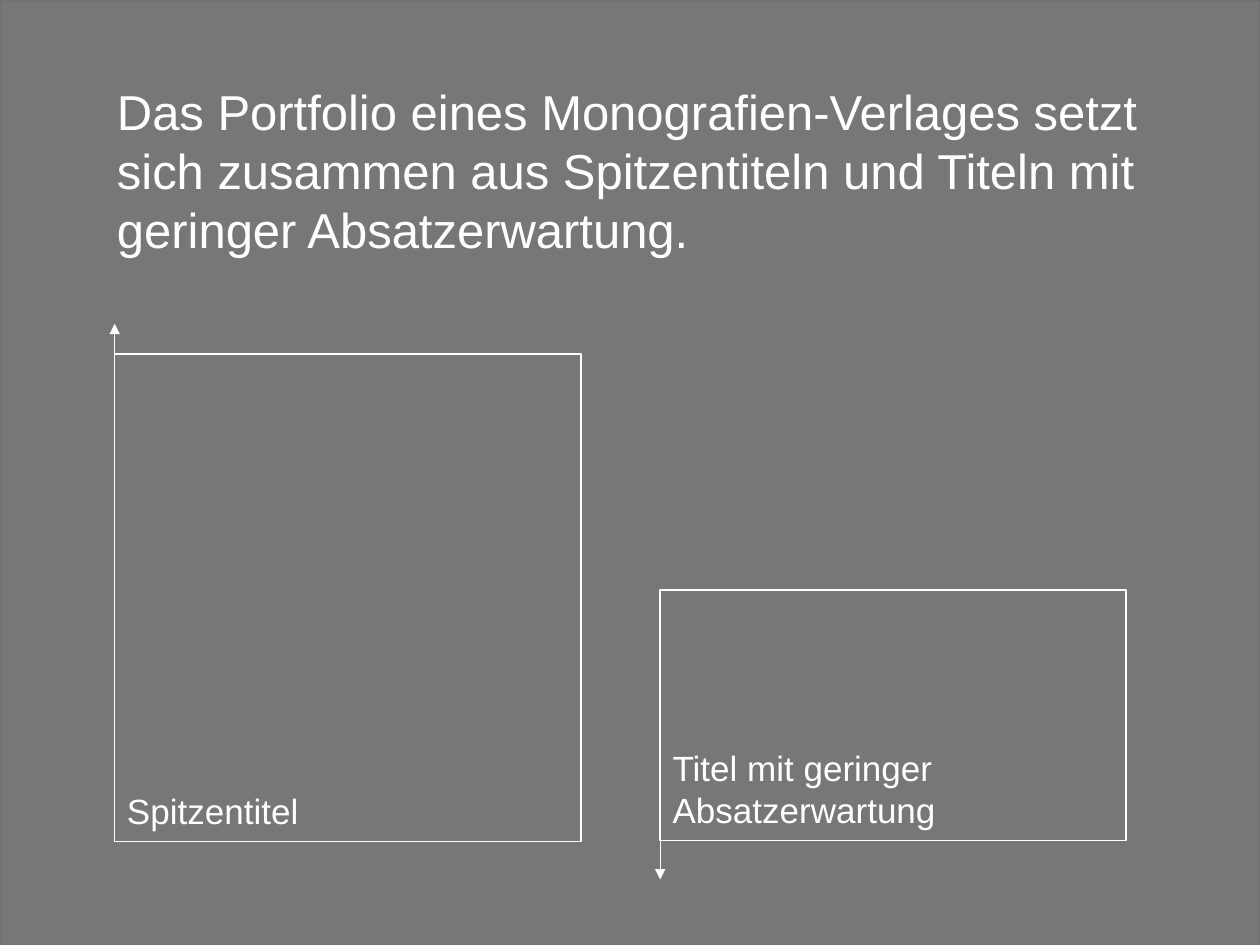
from lxml import etree
from pptx import Presentation
from pptx.dml.color import RGBColor
from pptx.enum.shapes import MSO_CONNECTOR, MSO_SHAPE
from pptx.enum.text import MSO_ANCHOR, PP_ALIGN
from pptx.oxml.ns import qn
from pptx.util import Inches, Pt

COLORS = {"background": "777777", "edge": "717171", "white": "FFFFFF"}
FONT = "Arial"


def color(name):
    return RGBColor.from_string(COLORS[name])


def write_text(shape, text, size, anchor):
    frame = shape.text_frame
    frame.word_wrap = True
    frame.vertical_anchor = anchor
    para = frame.paragraphs[0]
    para.alignment = PP_ALIGN.LEFT
    span = para.add_run()
    span.text = text
    span.font.name = FONT
    span.font.size = Pt(size)
    span.font.color.rgb = color("white")


def add_rectangle(page, box, line, width, fill=None):
    shape = page.shapes.add_shape(MSO_SHAPE.RECTANGLE, *map(Inches, box))
    shape.shadow.inherit = False
    if fill:
        shape.fill.solid()
        shape.fill.fore_color.rgb = color(fill)
    else:
        shape.fill.background()
    shape.line.color.rgb = color(line)
    shape.line.width = Pt(width)
    return shape


def add_title(page, box, text):
    title = page.shapes.add_textbox(*map(Inches, box))
    write_text(title, text, 28, MSO_ANCHOR.TOP)


def add_category(page, box, label):
    category = add_rectangle(page, box, "white", 1)
    category.text_frame.margin_bottom = Inches(0.08)
    write_text(category, label, 20, MSO_ANCHOR.BOTTOM)


def add_arrow(page, x, start, end):
    arrow = page.shapes.add_connector(
        MSO_CONNECTOR.STRAIGHT, Inches(x), Inches(start), Inches(x), Inches(end))
    arrow.line.color.rgb = color("white")
    arrow.line.width = Pt(0.75)
    etree.SubElement(arrow.line._get_or_add_ln(), qn("a:tailEnd"), type="triangle")
    etree.SubElement(arrow._element.spPr, qn("a:effectLst"))


def build_slide(page, box):
    # Background and statement
    add_rectangle(page, box, "edge", 0.75, fill="background")
    add_title(page, (0.83, 0.6, 8.5, 1.51),
              "Das Portfolio eines Monografien-Verlages setzt sich zusammen aus "
              "Spitzentiteln und Titeln mit geringer Absatzerwartung.")

    # The two kinds of titles
    top_left, low_left, width = 0.91, 5.24, 3.7
    add_category(page, (top_left, 2.81, width, 3.87), "Spitzentitel")
    add_category(page, (low_left, 4.68, width, 1.99),
                 "Titel mit geringer Absatzerwartung")

    # Sales direction along each left edge
    add_arrow(page, top_left, 6.68, 2.57)
    add_arrow(page, low_left, 5.25, 6.98)


def main():
    deck = Presentation()
    deck.slide_width, deck.slide_height = Inches(10), Inches(7.5)
    page = deck.slides.add_slide(deck.slide_layouts[6])
    build_slide(page, (0, 0, 10, 7.5))
    deck.save("out.pptx")


if __name__ == "__main__":
    main()
